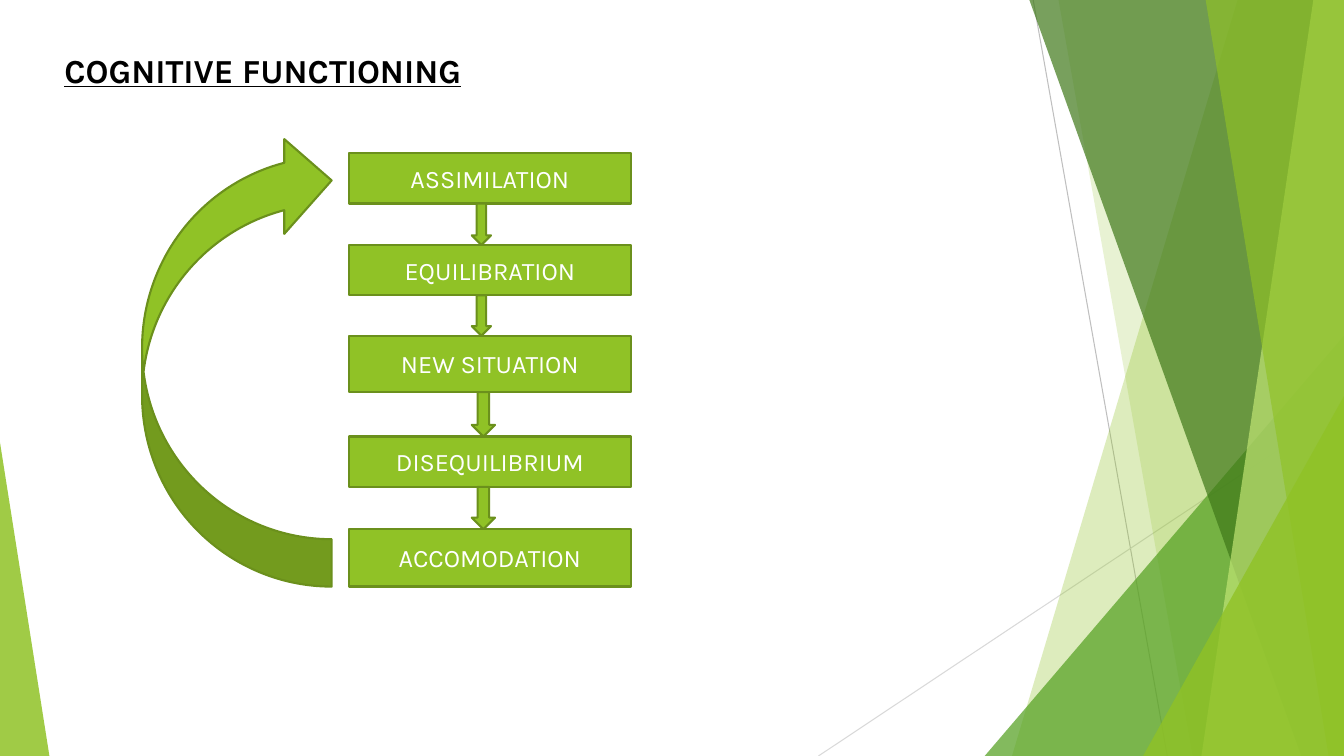
import pptx
import pptx.dml.color
import pptx.enum.shapes
import pptx.enum.text
import pptx.oxml.ns
import pptx.util
from lxml import etree

Pt = pptx.util.Pt
RGBColor = pptx.dml.color.RGBColor
MSO_SHAPE = pptx.enum.shapes.MSO_SHAPE
PP_ALIGN = pptx.enum.text.PP_ALIGN
MSO_ANCHOR = pptx.enum.text.MSO_ANCHOR
qn = pptx.oxml.ns.qn

LIME = RGBColor(0x90, 0xC2, 0x26)
OLIVE = RGBColor(0x6B, 0x90, 0x1C)
GREEN = RGBColor(0x54, 0xA0, 0x21)
FOREST = RGBColor(0x3F, 0x78, 0x19)
PALE_LIME = RGBColor(0xC0, 0xE4, 0x74)
GREY = RGBColor(0xBF, 0xBF, 0xBF)
LIGHT_GREY = RGBColor(0xD9, 0xD9, 0xD9)
BLACK = RGBColor(0x00, 0x00, 0x00)
WHITE = RGBColor(0xFF, 0xFF, 0xFF)

W, H = 960, 540
PANEL_TOP = -0.6

prs = pptx.Presentation()
prs.slide_width, prs.slide_height = Pt(W), Pt(H)
s = prs.slides.add_slide(prs.slide_layouts[6])


def paint(sp, color, opacity=100, outline=None):
    """Give a shape a flat fill, with an optional opacity in percent and outline."""
    sp.shadow.inherit = False
    sp.fill.solid()
    sp.fill.fore_color.rgb = color
    if opacity < 100:
        clr = sp.fill._xPr.find(qn("a:solidFill"))[0]
        etree.SubElement(clr, qn("a:alpha"), val=str(opacity * 1000))
    if outline is None:
        sp.line.fill.background()
    else:
        sp.line.color.rgb = outline
        sp.line.width = Pt(1.5)


def write(tf, text, align, **font):
    p = tf.paragraphs[0]
    p.alignment = align
    r = p.add_run()
    r.text = text
    r.font.color.rgb = font.pop("color")
    for name, value in font.items():
        setattr(r.font, name, value)


# Thin background lines
for x1, y1, x2, y2, color in [
    (738, 0, 833.8, H, GREY),
    (W, 290.2, 584.6, H, LIGHT_GREY),
]:
    line = s.shapes.add_connector(
        pptx.enum.shapes.MSO_CONNECTOR.STRAIGHT, Pt(x1), Pt(y1), Pt(x2), Pt(y2))
    line.line.color.rgb = color
    line.line.width = Pt(0.75)
    etree.SubElement(line._element.spPr, qn("a:effectLst"))

# Translucent facets, back to front: panels run to the right edge of the slide
# from (top x, bottom x); triangles have (left, top, width, apex)
for kind, place, color, opacity in [
    ("panel", (884.2, 722.9), LIME, 30),
    ("panel", (756, 851.8), LIME, 20),
    ("triangle", (703.4, 239.8, 256.6, 1), GREEN, 72),
    ("panel", (735.1, 929.5), FOREST, 70),
    ("panel", (938.2, 858.2), PALE_LIME, 70),
    ("panel", (861.1, 949), LIME, 65),
    ("triangle", (816.5, 283, 143.5, 1), LIME, 80),
    ("triangle", (0, 316.1, 35.3, 0), LIME, 85),
]:
    if kind == "panel":
        top_x, bottom_x = place
        outline = s.shapes.build_freeform(Pt(top_x), Pt(PANEL_TOP))
        outline.add_line_segments(
            [(Pt(W), Pt(PANEL_TOP)), (Pt(W), Pt(H)), (Pt(bottom_x), Pt(H))])
        facet = outline.convert_to_shape()
    else:
        left, top, width, apex = place
        facet = s.shapes.add_shape(
            MSO_SHAPE.ISOSCELES_TRIANGLE, Pt(left), Pt(top), Pt(width), Pt(H - top))
        facet.adjustments[0] = apex
    paint(facet, color, opacity)

# Title
title = s.shapes.add_textbox(Pt(38.9), Pt(32.4), Pt(319), Pt(36))
title.text_frame.word_wrap = True
write(title.text_frame, "COGNITIVE FUNCTIONING", PP_ALIGN.LEFT,
      name="Karla", size=Pt(24), bold=True, underline=True, color=BLACK)

# Steps: text, top, height
steps = [
    ("ASSIMILATION", 109.4, 36),
    ("EQUILIBRATION", 175, 36),
    ("NEW SITUATION", 239.8, 40.3),
    ("DISEQUILIBRIUM", 311.8, 36),
    ("ACCOMODATION", 378, 41),
]
for text, top, height in steps:
    box = s.shapes.add_shape(
        MSO_SHAPE.RECTANGLE, Pt(249.1), Pt(top), Pt(201.6), Pt(height))
    paint(box, LIME, outline=OLIVE)
    box.text_frame.word_wrap = True
    box.text_frame.vertical_anchor = MSO_ANCHOR.MIDDLE
    write(box.text_frame, text, PP_ALIGN.CENTER,
          name="Karla", size=Pt(18), color=WHITE)

# Each arrow fills the gap between two steps
for step, following, width in zip(steps, steps[1:], [13.7, 13.7, 16.6, 16.6]):
    top = step[1] + step[2]
    arrow = s.shapes.add_shape(
        MSO_SHAPE.DOWN_ARROW, Pt(337), Pt(top), Pt(width), Pt(following[1] - top))
    paint(arrow, LIME, outline=OLIVE)

# Arrow back from the last step to the first
loop = s.shapes.add_shape(
    MSO_SHAPE.CURVED_LEFT_ARROW, Pt(101.5), Pt(95), Pt(135.4), Pt(324))
loop.rotation = 180
paint(loop, LIME, outline=OLIVE)

prs.save("out.pptx")
